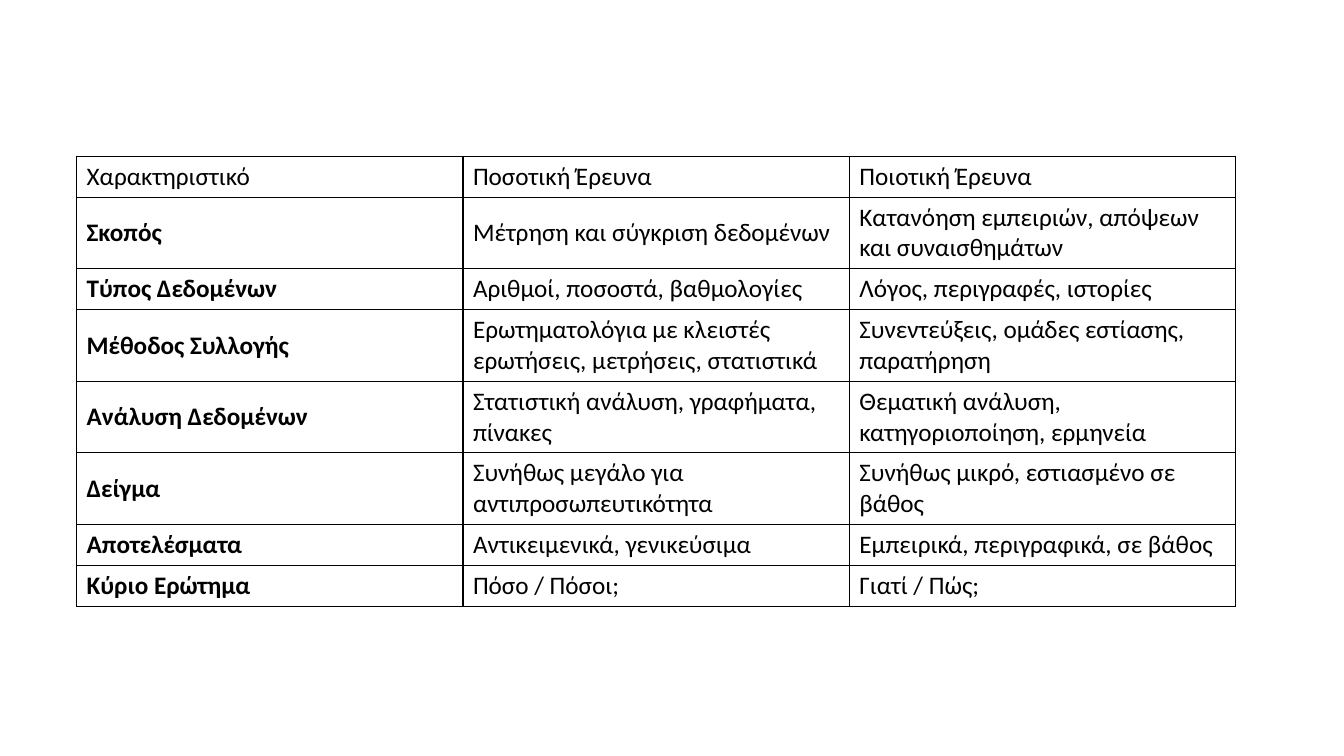
from lxml import etree
from pptx import Presentation
from pptx.dml.color import RGBColor
from pptx.enum.text import MSO_ANCHOR
from pptx.oxml.ns import qn
from pptx.util import Pt

MIDDLE = MSO_ANCHOR.MIDDLE
BLANK_LAYOUT = 6
FONT = "Calibri"
BLACK = "000000"

HEADER = ("Χαρακτηριστικό", "Ποσοτική Έρευνα", "Ποιοτική Έρευνα")
COMPARISON = [
    ("Σκοπός", "Μέτρηση και σύγκριση δεδομένων",
     "Κατανόηση εμπειριών, απόψεων και συναισθημάτων"),
    ("Τύπος Δεδομένων", "Αριθμοί, ποσοστά, βαθμολογίες",
     "Λόγος, περιγραφές, ιστορίες"),
    ("Μέθοδος Συλλογής", "Ερωτηματολόγια με κλειστές ερωτήσεις, μετρήσεις, στατιστικά",
     "Συνεντεύξεις, ομάδες εστίασης, παρατήρηση"),
    ("Ανάλυση Δεδομένων", "Στατιστική ανάλυση, γραφήματα, πίνακες",
     "Θεματική ανάλυση, κατηγοριοποίηση, ερμηνεία"),
    ("Δείγμα", "Συνήθως μεγάλο για αντιπροσωπευτικότητα",
     "Συνήθως μικρό, εστιασμένο σε βάθος"),
    ("Αποτελέσματα", "Αντικειμενικά, γενικεύσιμα",
     "Εμπειρικά, περιγραφικά, σε βάθος"),
    ("Κύριο Ερώτημα", "Πόσο / Πόσοι;", "Γιατί / Πώς;"),
]
ROWS = [HEADER] + COMPARISON
TWO_LINE_ROWS = {1, 3, 4, 5}

LEFT, TOP = 54.7, 111.6
COLUMN_WIDTH = 276
ONE_LINE, TWO_LINES = 29.2, 51


def color(value):
    return RGBColor.from_string(value)


def write(cell, text, size=18, bold=False, ink=BLACK):
    cell.vertical_anchor = MIDDLE
    span = cell.text_frame.paragraphs[0].add_run()
    span.text = text
    span.font.name = FONT
    span.font.size = Pt(size)
    span.font.bold = bold
    span.font.color.rgb = color(ink)


def outline(cell, width=1, ink=BLACK):
    properties = cell._tc.get_or_add_tcPr()
    for side in ("a:lnL", "a:lnR", "a:lnT", "a:lnB"):
        line = etree.SubElement(properties, qn(side), w=str(Pt(width)))
        fill = etree.SubElement(line, qn("a:solidFill"))
        etree.SubElement(fill, qn("a:srgbClr"), val=ink)


def main():
    deck = Presentation()
    deck.slide_width, deck.slide_height = Pt(960), Pt(540)
    page = deck.slides.add_slide(deck.slide_layouts[BLANK_LAYOUT])

    heights = [TWO_LINES if index in TWO_LINE_ROWS else ONE_LINE
               for index in range(len(ROWS))]
    frame = page.shapes.add_table(
        len(ROWS), len(HEADER), Pt(LEFT), Pt(TOP),
        Pt(COLUMN_WIDTH * len(HEADER)), Pt(sum(heights)))
    table = frame.table
    table.first_row = False
    table.horz_banding = False

    for column in table.columns:
        column.width = Pt(COLUMN_WIDTH)
    for row_index, texts in enumerate(ROWS):
        table.rows[row_index].height = Pt(heights[row_index])
        for column_index, text in enumerate(texts):
            cell = table.cell(row_index, column_index)
            write(cell, text, bold=row_index > 0 and column_index == 0)
            outline(cell)
            cell.fill.background()

    deck.save("out.pptx")


if __name__ == "__main__":
    main()
